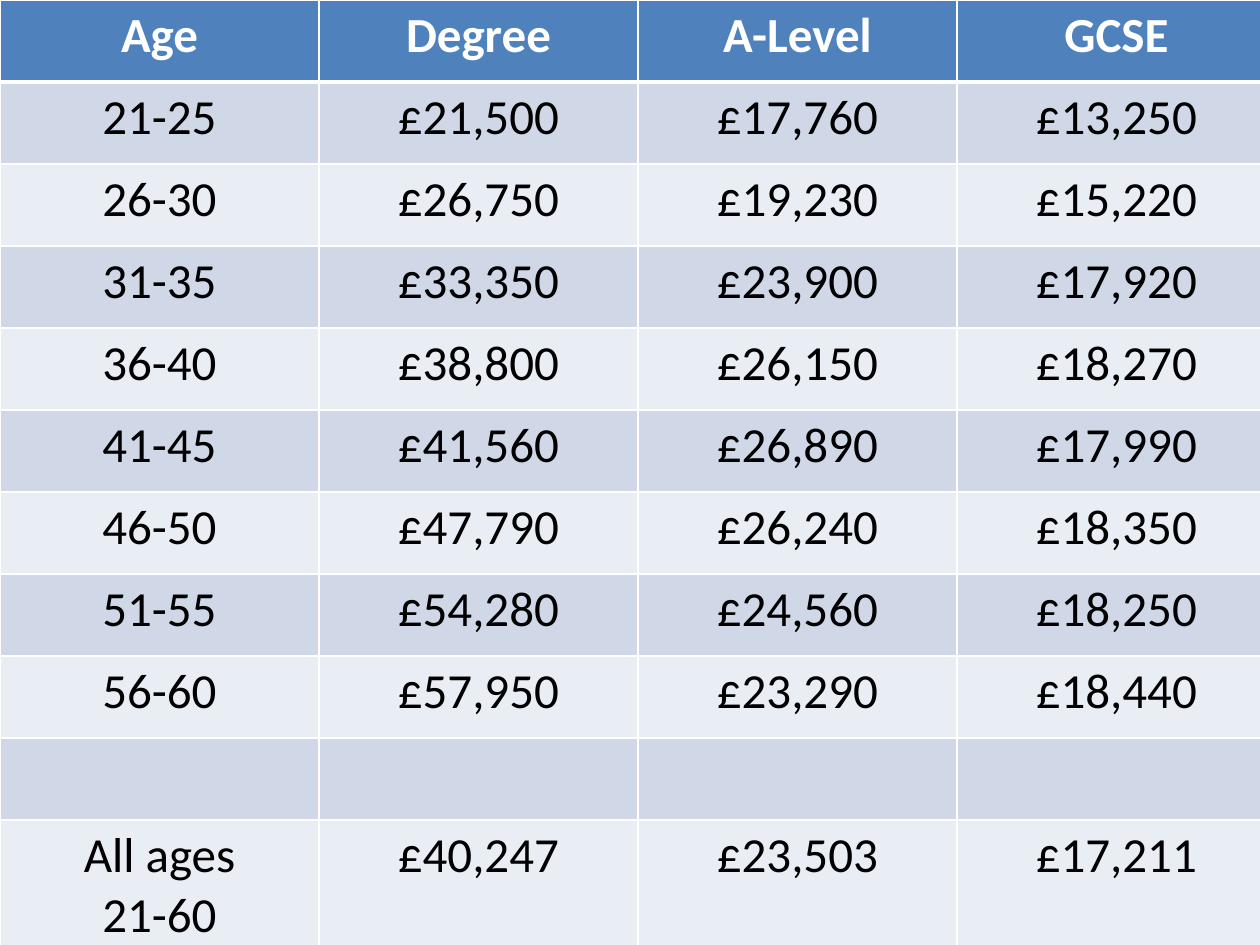
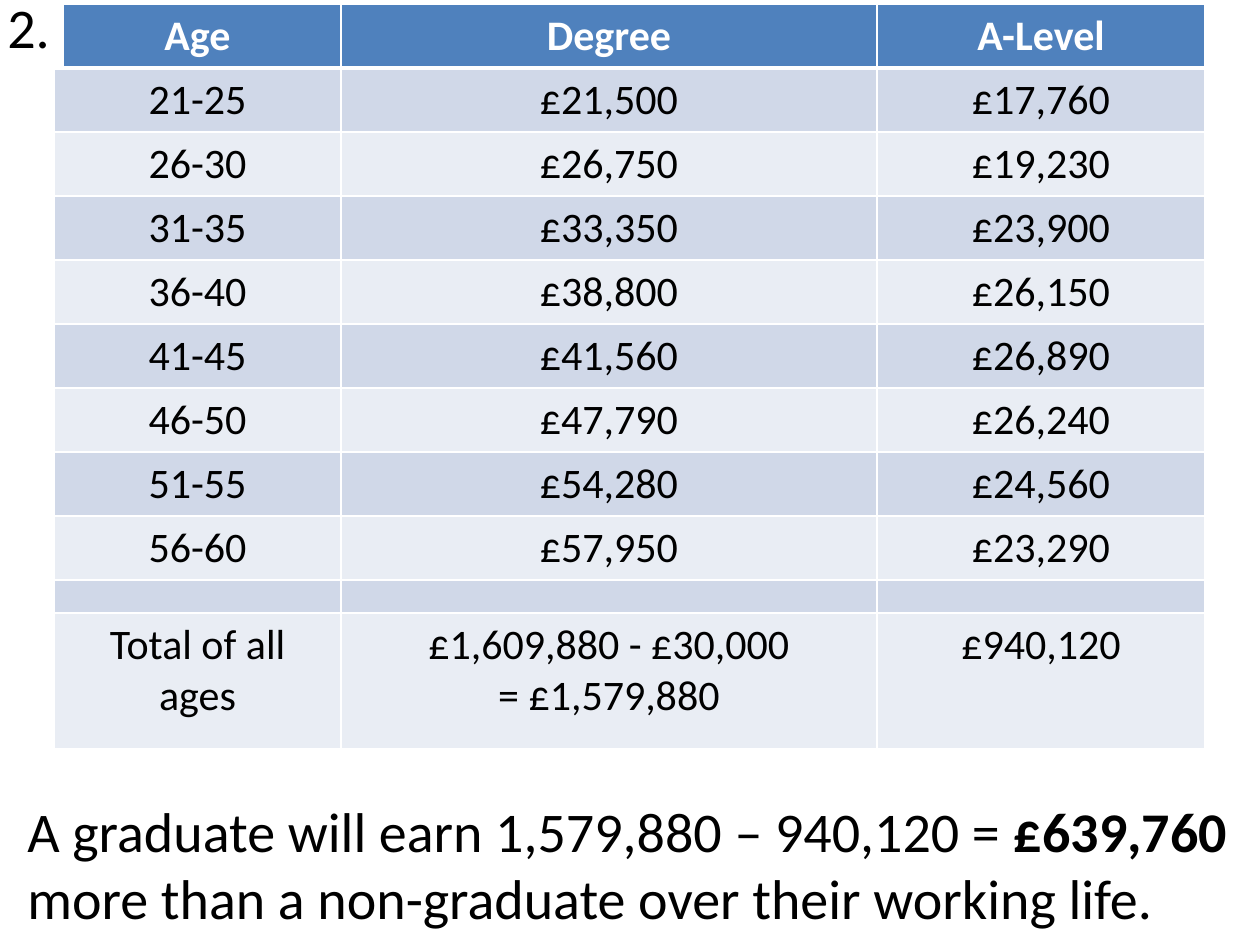
from lxml.etree import SubElement as Sub
from pptx import Presentation
from pptx.dml.color import RGBColor as RGB
from pptx.enum.text import MSO_AUTO_SIZE as Fit, PP_ALIGN as Align
from pptx.oxml.ns import qn
from pptx.util import Emu, Pt

DPI = 126
FONT = "Calibri"
HUES = {"head": "4F81BD", "odd": "D0D8E8", "even": "E9EDF4", "white": "FFFFFF", "black": "000000"}
HEADS = ["Age", "Degree", "A-Level", "GCSE"]
PAY = [
    ["21-25", "£21,500", "£17,760", "£13,250"],
    ["26-30", "£26,750", "£19,230", "£15,220"],
    ["31-35", "£33,350", "£23,900", "£17,920"],
    ["36-40", "£38,800", "£26,150", "£18,270"],
    ["41-45", "£41,560", "£26,890", "£17,990"],
    ["46-50", "£47,790", "£26,240", "£18,350"],
    ["51-55", "£54,280", "£24,560", "£18,250"],
    ["56-60", "£57,950", "£23,290", "£18,440"],
]
MEAN = ["All ages\n21-60", "£40,247", "£23,503", "£17,211"]
TOTAL = ["Total of all ages", "£1,609,880 - £30,000\n= £1,579,880", "£940,120"]


def px(num):
    """Turn pixels into EMU."""
    return Emu(num * 914400 // DPI)


def hue(name):
    """Look up a colour by name."""
    return RGB.from_string(HUES[name])


def style(para, size, tint, bold=None):
    """Set the font of a whole paragraph."""
    font = para.font
    font.name, font.size, font.bold = FONT, Pt(size), bold
    font.color.rgb = hue(tint)


def edge(cell, row):
    """Draw white borders round a cell, thick under the header."""
    thick = {"T": row == 1, "B": row == 0}
    props = cell._tc.get_or_add_tcPr()
    for side in "LRTB":
        width = Pt(3 if thick.get(side) else 1)
        line = Sub(props, qn(f"a:ln{side}"), w=str(width))
        Sub(Sub(line, qn("a:solidFill")), qn("a:srgbClr"), val=HUES["white"])


def fill_cell(cell, row, text, size):
    """Give a cell its borders, band colour and text."""
    edge(cell, row)
    cell.fill.solid()
    cell.fill.fore_color.rgb = hue("head" if row == 0 else "odd" if row % 2 else "even")
    cell.text_frame.text = text
    for para in cell.text_frame.paragraphs:
        para.alignment = Align.CENTER
        style(para, size, "white" if row == 0 else "black", row == 0)
        if not text:
            para._p.get_or_add_endParaRPr().set("sz", "800")


def pay_table(slide, left, top, cols, rows, last, size):
    """Add the pay table with a blank row above its last row."""
    count = len(cols)
    data = [HEADS, *PAY, [""] * count, last]
    frame = slide.shapes.add_table(len(data), count, px(left), px(top), px(sum(cols)), px(sum(rows)))
    table = frame.table
    for col, width in zip(table.columns, cols):
        col.width = px(width)
    for num, (height, texts) in enumerate(zip(rows, data)):
        table.rows[num].height = px(height)
        for pos, text in enumerate(texts[:count]):
            fill_cell(table.cell(num, pos), num, text, size)


def label(slide, area, lines, back=None):
    """Add unwrapped text, each line a list of (text, bold) runs."""
    box = slide.shapes.add_textbox(*map(px, area))
    if back:
        box.fill.solid()
        box.fill.fore_color.rgb = hue(back)
    frame = box.text_frame
    frame.word_wrap = False
    frame.auto_size = Fit.SHAPE_TO_FIT_TEXT
    for num, line in enumerate(lines):
        para = frame.add_paragraph() if num else frame.paragraphs[0]
        style(para, 32, "black")
        for text, bold in line:
            run = para.add_run()
            run.text, run.font.bold = text, bold


def main():
    """Build both slides and save them."""
    deck = Presentation()
    deck.slide_width, deck.slide_height = px(1260), px(945)
    first, second = (deck.slides.add_slide(deck.slide_layouts[6]) for _ in range(2))
    pay_table(first, 0, 0, [319] * 4, [82] * 10 + [149], MEAN, 28)
    pay_table(second, 54, 4, [287, 536, 328], [64] * 9 + [33, 136], TOTAL, 24)
    label(second, (15, 790, 1268, 149), [
        [("A graduate will earn 1,579,880 – 940,120 = ", False), ("£639,760", True)],
        [("more than a non-graduate over their working life.", False)],
    ])
    label(second, (-5, -14, 69, 81), [[("2.", False)]], "white")
    deck.save("out.pptx")


if __name__ == "__main__":
    main()
